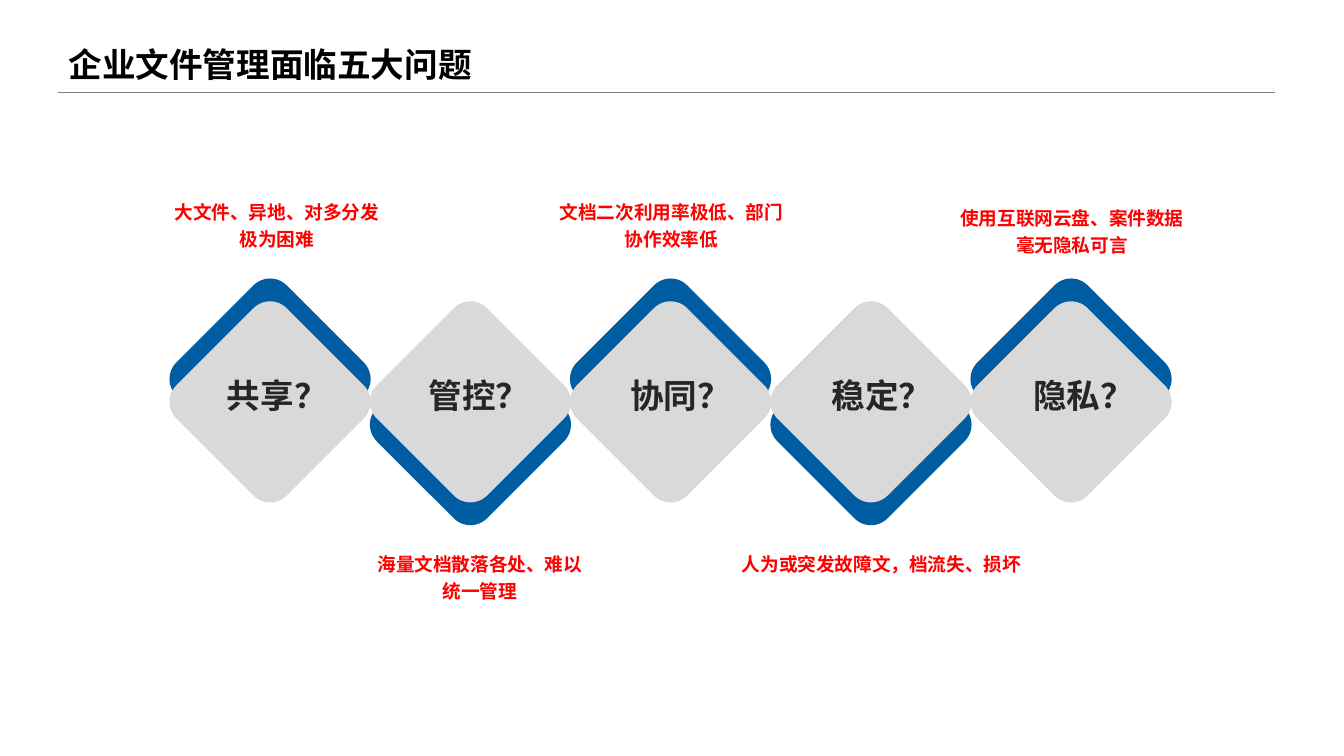
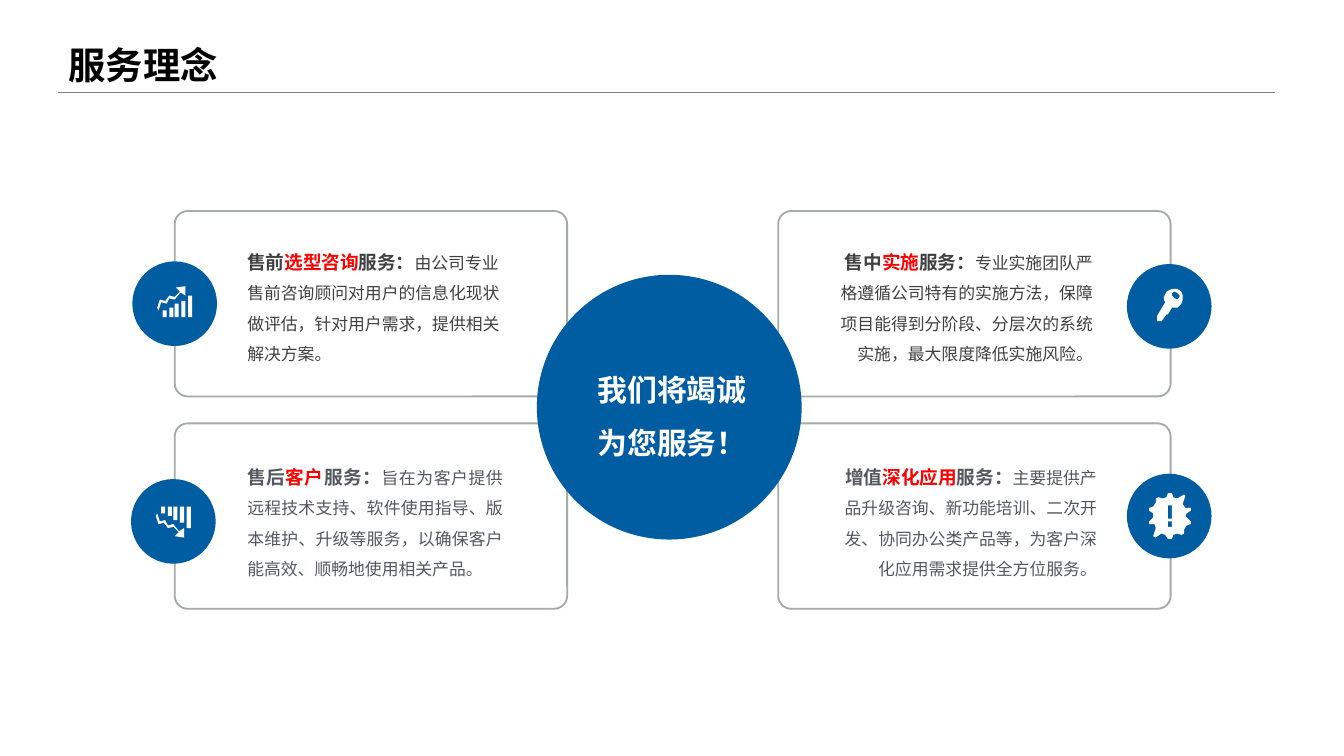
from lxml import etree
from pptx import Presentation
from pptx import util as u
from pptx.dml.color import RGBColor
from pptx.enum import shapes, text
from pptx.oxml.ns import qn

WIDTH = 10
HEIGHT = WIDTH * 9 / 16
FONT = "Noto Sans CJK SC"
COLORS = {
    "blue": "005DA2", "tile": "D9D9D9", "label": "262626", "red": "FF0000",
    "black": "000000", "white": "FFFFFF", "rule": "808080", "border": "A6AAA9",
    "dark": "404040", "slate": "53585F",
}
ALIGN = text.PP_ALIGN
SHAPE = shapes.MSO_SHAPE

PROBLEMS = [
    ("共享？", ["大文件、异地、对多分发", "极为困难"], (0.96, 1.46, 2.2, 0.4), ALIGN.CENTER),
    ("管控？", ["海量文档散落各处、难以", "统一管理"], (2.47, 4.08, 2.2, 0.4), ALIGN.CENTER),
    ("协同？", ["文档二次利用率极低、部门", "协作效率低"], (3.77, 1.46, 2.45, 0.4), ALIGN.CENTER),
    ("稳定？", ["人为或突发故障文，档流失、损坏"], (5.52, 4.08, 2.14, 0.18), ALIGN.JUSTIFY),
    ("隐私？", ["使用互联网云盘、案件数据", "毫无隐私可言"], (7.02, 1.51, 1.91, 0.4), ALIGN.CENTER),
]
TILE, TILE_LEFT, TILE_TOP, TILE_PITCH, TILE_SHIFT = 1.16, 1.43, 2.41, 1.49, 0.17
LABEL_LEFT, LABEL_PITCH = 1.59, 1.5


def bar(left, top, right, bottom):
    return [(left, top), (right, top), (right, bottom), (left, bottom)]


def flip(outlines):
    return [[(x, -y - 1) for x, y in outline] for outline in outlines]


RISING = [
    [(-4, -4), (0, -3), (4, -8), (5, -8), (8, -6), (8, -13), (1, -12), (4, -9),
     (0, -5), (-4, -6), (-7, -2), (-11, -3), (-13, 3), (-12, 5), (-10, -1), (-6, 0)],
    *[bar(left, top, left + 3, 10)
      for left, top in [(-9, 5), (-4, 3), (0, 0), (5, -2), (10, -6)]],
]
KEY = [
    [(10, -8), (9, -11), (6, -13), (2, -13), (-2, -11), (-4, -7), (-4, -5), (-3, -3),
     (-9, 7), (-9, 11), (-6, 11), (-5, 10), (-2, 6), (-1, 6), (2, 1), (6, 1),
     (9, -2), (10, -5)],
    [(7, -6), (6, -5), (4, -6), (2, -8), (2, -10), (4, -11), (6, -10), (8, -8)],
]
ALERT = [
    [(16, 4), (13, 1), (12, 0), (13, -2), (16, -4), (16, -6), (12, -6), (10, -9),
     (12, -15), (11, -16), (6, -13), (3, -14), (2, -17), (-1, -17), (-2, -14),
     (-5, -13), (-8, -14), (-10, -13), (-10, -10), (-12, -7), (-15, -6), (-15, -4),
     (-12, -2), (-12, 1), (-15, 4), (-15, 6), (-11, 6), (-10, 9), (-12, 15),
     (-10, 16), (-6, 13), (-3, 14), (-1, 17), (2, 17), (3, 14), (6, 13), (9, 14),
     (11, 13), (11, 10), (13, 7), (16, 6)],
    bar(-1, -8, 2, 2),
    bar(-1, 4, 2, 8),
]

SERVICES = [
    {"cell": (0, 0), "words": ("售前", "选型咨询", "服务："), "color": "dark",
     "detail": "由公司专业售前咨询顾问对用户的信息化现状做评估，针对用户需求，提供相关解决方案。",
     "left": 1.84, "align": ALIGN.LEFT, "center": (1.3, 2.26), "icon": RISING},
    {"cell": (0, 1), "words": ("售后", "客户", "服务："), "color": "slate",
     "detail": "旨在为客户提供远程技术支持、软件使用指导、版本维护、升级等服务，以确保客户能高效、顺畅地使用相关产品。",
     "left": 1.84, "align": ALIGN.JUSTIFY, "center": (1.29, 3.88), "icon": flip(RISING)},
    {"cell": (1, 0), "words": ("售中", "实施", "服务："), "color": "dark",
     "detail": "专业实施团队严格遵循公司特有的实施方法，保障项目能得到分阶段、分层次的系统实施，最大限度降低实施风险。",
     "left": 6.23, "align": ALIGN.RIGHT, "center": (8.7, 2.28), "icon": KEY},
    {"cell": (1, 1), "words": ("增值", "深化应用", "服务："), "color": "slate",
     "detail": "主要提供产品升级咨询、新功能培训、二次开发、协同办公类产品等，为客户深化应用需求提供全方位服务。",
     "left": 6.26, "align": ALIGN.RIGHT, "center": (8.7, 3.84), "icon": ALERT},
]
CARD_LEFTS, CARD_TOPS, CARD_SIZE = (1.3, 5.79), (1.57, 3.15), (2.92, 1.38)
TEXT_TOPS = (1.78, 3.38)
BADGE, HUB, HUB_CENTER = 0.63, 1.97, (4.98, 3.03)


def inches(values):
    return [u.Inches(value) for value in values]


def rgb(name):
    return RGBColor.from_string(COLORS[name])


def style(font, size, color, bold=True):
    font.size, font.bold = u.Pt(size), bold
    font.color.rgb = rgb(color)
    font.name = FONT
    etree.SubElement(font._rPr, qn("a:ea"), typeface=FONT)


def setup(frame, margins=(0, 0, 0, 0), anchor=text.MSO_ANCHOR.TOP):
    frame.word_wrap = True
    frame.auto_size = text.MSO_AUTO_SIZE.NONE
    frame.vertical_anchor = anchor
    (frame.margin_left, frame.margin_top,
     frame.margin_right, frame.margin_bottom) = inches(margins)
    return frame


def add_text(page, area, lines, size, color, align, spacing=None, **options):
    frame = setup(page.shapes.add_textbox(*inches(area)).text_frame, **options)
    for index, line in enumerate(lines):
        para = frame.add_paragraph() if index else frame.paragraphs[0]
        para.text, para.alignment = line, align
        if spacing:
            para.line_spacing = spacing
        style(para.font, size, color)


def paint(shape, fill=None, line=None):
    shape.shadow.inherit = False
    if fill:
        shape.fill.solid()
        shape.fill.fore_color.rgb = rgb(fill)
    else:
        shape.fill.background()
    if line:
        shape.line.color.rgb = rgb(line)
        shape.line.width = u.Pt(1)
    else:
        shape.line.fill.background()


def add_shape(page, kind, area, fill=None, line=None, corner=None, turn=0):
    shape = page.shapes.add_shape(kind, *inches(area))
    if corner is not None:
        shape.adjustments[0] = corner
    shape.rotation = turn
    paint(shape, fill, line)


def add_circle(page, center, size):
    x, y = center
    add_shape(page, SHAPE.OVAL, (x - size / 2, y - size / 2, size, size), "blue")


def add_icon(page, center, outlines):
    first, *others = outlines
    builder = page.shapes.build_freeform(*first[0], scale=u.Inches(0.01))
    builder.add_line_segments(first[1:], close=True)
    for outline in others:
        builder.move_to(*outline[0])
        builder.add_line_segments(outline[1:], close=True)
    paint(builder.convert_to_shape(*inches(center)), "white")


def add_page(deck, title, size):
    page = deck.slides.add_slide(deck.slide_layouts[5])
    box = page.shapes.title
    box.left, box.top, box.width, box.height = inches((0.51, 0.27, 4.93, 0.42))
    frame = setup(box.text_frame, (0, 0.05, 0, 0.05), text.MSO_ANCHOR.MIDDLE)
    para = frame.paragraphs[0]
    para.text, para.alignment = title, ALIGN.LEFT
    style(para.font, size, "black")
    rule = page.shapes.add_connector(
        shapes.MSO_CONNECTOR.STRAIGHT, *inches((0.43, 0.69, 9.49, 0.69)))
    rule.line.color.rgb = rgb("rule")
    rule.line.width = u.Pt(0.75)
    etree.SubElement(rule._element.spPr, qn("a:effectLst"))
    return page


def build_problems(deck):
    page = add_page(deck, "企业文件管理面临五大问题", 18)
    for index, (label, note, area, align) in enumerate(PROBLEMS):
        left = TILE_LEFT + index * TILE_PITCH
        shift, turn = (TILE_SHIFT, 135) if index % 2 else (-TILE_SHIFT, 315)
        for top, fill in ((TILE_TOP + shift, "blue"), (TILE_TOP, "tile")):
            add_shape(page, SHAPE.ROUNDED_RECTANGLE, (left, top, TILE, TILE),
                      fill, corner=0.15, turn=turn)
        add_text(page, (LABEL_LEFT + index * LABEL_PITCH, 2.83, 0.99, 0.22), [label],
                 18, "label", ALIGN.LEFT, margins=(0.1, 0.05, 0.1, 0.05),
                 anchor=text.MSO_ANCHOR.MIDDLE)
        add_text(page, area, note, 10, "red", align, 1.2)


def add_service_text(page, service):
    area = (service["left"], TEXT_TOPS[service["cell"][1]], 1.9, 0.42)
    para = setup(page.shapes.add_textbox(*inches(area)).text_frame).paragraphs[0]
    para.alignment, para.line_spacing = service["align"], 1.5
    color = service["color"]
    formats = [(10, color, True), (10, "red", True), (10, color, True), (9, color, False)]
    for words, look in zip((*service["words"], service["detail"]), formats):
        span = para.add_run()
        span.text = words
        style(span.font, *look)


def build_services(deck):
    page = add_page(deck, "服务理念", 20)
    for service in SERVICES:
        column, row = service["cell"]
        add_shape(page, SHAPE.ROUNDED_RECTANGLE,
                  (CARD_LEFTS[column], CARD_TOPS[row], *CARD_SIZE),
                  line="border", corner=0.07)
    add_circle(page, HUB_CENTER, HUB)
    add_text(page, (4.37, 2.77, 1.26, 0.52), ["我们将竭诚为您服务！"], 16, "white",
             ALIGN.CENTER, 1.5, anchor=text.MSO_ANCHOR.MIDDLE)
    for service in SERVICES:
        add_service_text(page, service)
        add_circle(page, service["center"], BADGE)
        add_icon(page, service["center"], service["icon"])


def main():
    deck = Presentation()
    deck.slide_width, deck.slide_height = inches((WIDTH, HEIGHT))
    build_problems(deck)
    build_services(deck)
    deck.save("out.pptx")


if __name__ == "__main__":
    main()
